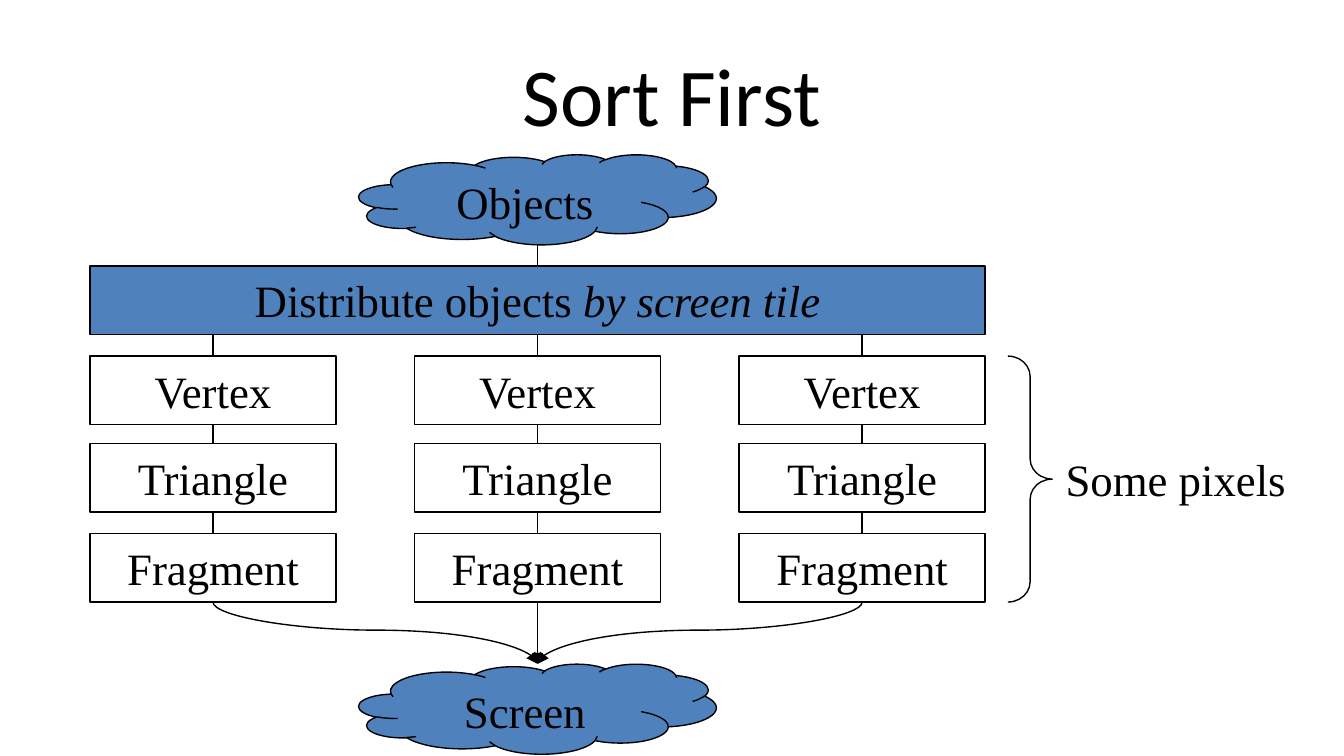
from dataclasses import dataclass

from lxml import etree
from pptx import Presentation
from pptx.dml.color import RGBColor
from pptx.enum.shapes import MSO_CONNECTOR, MSO_SHAPE
from pptx.enum.text import MSO_ANCHOR, PP_ALIGN
from pptx.oxml.ns import qn
from pptx.util import Inches, Pt

RECTANGLE, CLOUD, BRACE = MSO_SHAPE.RECTANGLE, MSO_SHAPE.CLOUD, MSO_SHAPE.RIGHT_BRACE
STRAIGHT, CURVE = MSO_CONNECTOR.STRAIGHT, MSO_CONNECTOR.CURVE
TOP, MIDDLE = MSO_ANCHOR.TOP, MSO_ANCHOR.MIDDLE
LEFT, CENTER = PP_ALIGN.LEFT, PP_ALIGN.CENTER


@dataclass(frozen=True)
class Theme:
    ink: RGBColor = RGBColor(0x00, 0x00, 0x00)
    accent: RGBColor = RGBColor(0x4F, 0x81, 0xBD)
    title_font: str = "Calibri"
    body_font: str = "Times New Roman"
    title_size: int = 44
    body_size: int = 24
    line_width: float = 0.75


@dataclass(frozen=True)
class Box:
    left: float
    top: float
    width: float
    height: float

    @property
    def bottom(self) -> float:
        return self.top + self.height

    @property
    def center(self) -> float:
        return self.left + self.width / 2

    def lengths(self) -> tuple:
        return tuple(Inches(v) for v in (self.left, self.top, self.width, self.height))


@dataclass(frozen=True)
class TextRun:
    text: str
    italic: bool = False


@dataclass(frozen=True)
class Stage:
    name: str
    top: float


THEME = Theme()

# Layout of the pipeline diagram, on a 16:9 slide
SLIDE_WIDTH = 10
SLIDE_HEIGHT = SLIDE_WIDTH * 9 / 16
TITLE = Box(0.5, 0.23, 9, 0.94)
OBJECTS = Box(2.67, 1.15, 2.66, 0.67)
DISTRIBUTE = Box(0.67, 1.98, 6.66, 0.51)
SCREEN = Box(2.67, 4.94, 2.66, 0.67)
STAGES = [Stage("Vertex", 2.65), Stage("Triangle", 3.3), Stage("Fragment", 3.97)]
STAGE_WIDTH, STAGE_HEIGHT = 1.83, 0.51
PIPELINES = 3
PITCH = (DISTRIBUTE.width - STAGE_WIDTH) / (PIPELINES - 1)
MERGE_BEND = 45500


def write(text_frame, runs: list[TextRun], align, anchor,
          font: str = THEME.body_font, size: int = THEME.body_size) -> None:
    text_frame.vertical_anchor = anchor
    paragraph = text_frame.paragraphs[0]
    paragraph.alignment = align
    for item in runs:
        run = paragraph.add_run()
        run.text = item.text
        run.font.name = font
        run.font.size = Pt(size)
        run.font.color.rgb = THEME.ink
        if item.italic:
            run.font.italic = True


def style_line(line) -> None:
    line.color.rgb = THEME.ink
    line.width = Pt(THEME.line_width)


def add_node(slide, kind, box: Box, runs: list[TextRun], filled: bool = False,
             anchor=MIDDLE):
    shape = slide.shapes.add_shape(kind, *box.lengths())
    shape.shadow.inherit = False
    if filled:
        shape.fill.solid()
        shape.fill.fore_color.rgb = THEME.accent
    else:
        shape.fill.background()
    style_line(shape.line)
    write(shape.text_frame, runs, CENTER, anchor)
    return shape


def add_line(slide, kind, start: tuple, end: tuple, arrow: bool = False):
    points = [Inches(value) for value in (*start, *end)]
    connector = slide.shapes.add_connector(kind, *points)
    style_line(connector.line)
    properties = connector._element.spPr
    if arrow:
        etree.SubElement(properties.find(qn("a:ln")), qn("a:tailEnd"), type="triangle")
    etree.SubElement(properties, qn("a:effectLst"))
    return connector


def add_merge_curve(slide, start: tuple, end: tuple) -> None:
    """Curve that leaves and arrives vertically: a quarter-turned connector."""
    width, height = end[1] - start[1], abs(end[0] - start[0])
    left = (start[0] + end[0] - width) / 2
    top = (start[1] + end[1] - height) / 2
    connector = add_line(slide, CURVE, (left, top), (left + width, top + height), True)
    properties = connector._element.spPr
    transform = properties.find(qn("a:xfrm"))
    rightward = end[0] > start[0]
    transform.set("rot", str((270 if rightward else 90) * 60000))
    if rightward:
        transform.set("flipH", "1")
    adjustments = properties.find(qn("a:prstGeom")).find(qn("a:avLst"))
    etree.SubElement(adjustments, qn("a:gd"), name="adj1", fmla=f"val {MERGE_BEND}")


def add_pipeline(slide, left: float) -> None:
    above = DISTRIBUTE.bottom
    for stage in STAGES:
        box = Box(left, stage.top, STAGE_WIDTH, STAGE_HEIGHT)
        add_line(slide, STRAIGHT, (box.center, above), (box.center, box.top))
        add_node(slide, RECTANGLE, box, [TextRun(stage.name)])
        above = box.bottom
    # Merge into the screen
    start, end = (box.center, above), (SCREEN.center, SCREEN.top)
    if abs(start[0] - end[0]) < 0.1:
        add_line(slide, STRAIGHT, (end[0], above), end, True)
    else:
        add_merge_curve(slide, start, end)


def main() -> None:
    presentation = Presentation()
    presentation.slide_width = Inches(SLIDE_WIDTH)
    presentation.slide_height = Inches(SLIDE_HEIGHT)
    slide = presentation.slides.add_slide(presentation.slide_layouts[5])

    # Title
    title = slide.shapes.title
    title.left, title.top, title.width, title.height = TITLE.lengths()
    write(title.text_frame, [TextRun("Sort First")], CENTER, MIDDLE,
          THEME.title_font, THEME.title_size)

    # Distribution of the objects
    add_line(slide, STRAIGHT, (OBJECTS.center, OBJECTS.bottom),
             (OBJECTS.center, DISTRIBUTE.top))
    add_node(slide, RECTANGLE, DISTRIBUTE,
             [TextRun("Distribute objects "), TextRun("by screen tile", True)], True, TOP)

    # Parallel pipelines
    for column in range(PIPELINES):
        add_pipeline(slide, DISTRIBUTE.left + column * PITCH)

    # Source and destination clouds
    add_node(slide, CLOUD, OBJECTS, [TextRun("Objects")], True, TOP)
    add_node(slide, CLOUD, SCREEN, [TextRun("Screen")], True, TOP)

    # Brace and its label
    brace = add_node(slide, BRACE, Box(7.5, 2.65, 0.33, 1.83), [])
    brace.adjustments[0] = 0.458
    label = slide.shapes.add_textbox(*Box(7.83, 3.31, 1.86, 0.5).lengths())
    label.text_frame.word_wrap = False
    write(label.text_frame, [TextRun("Some pixels")], LEFT, TOP)

    presentation.save("out.pptx")


if __name__ == "__main__":
    main()
